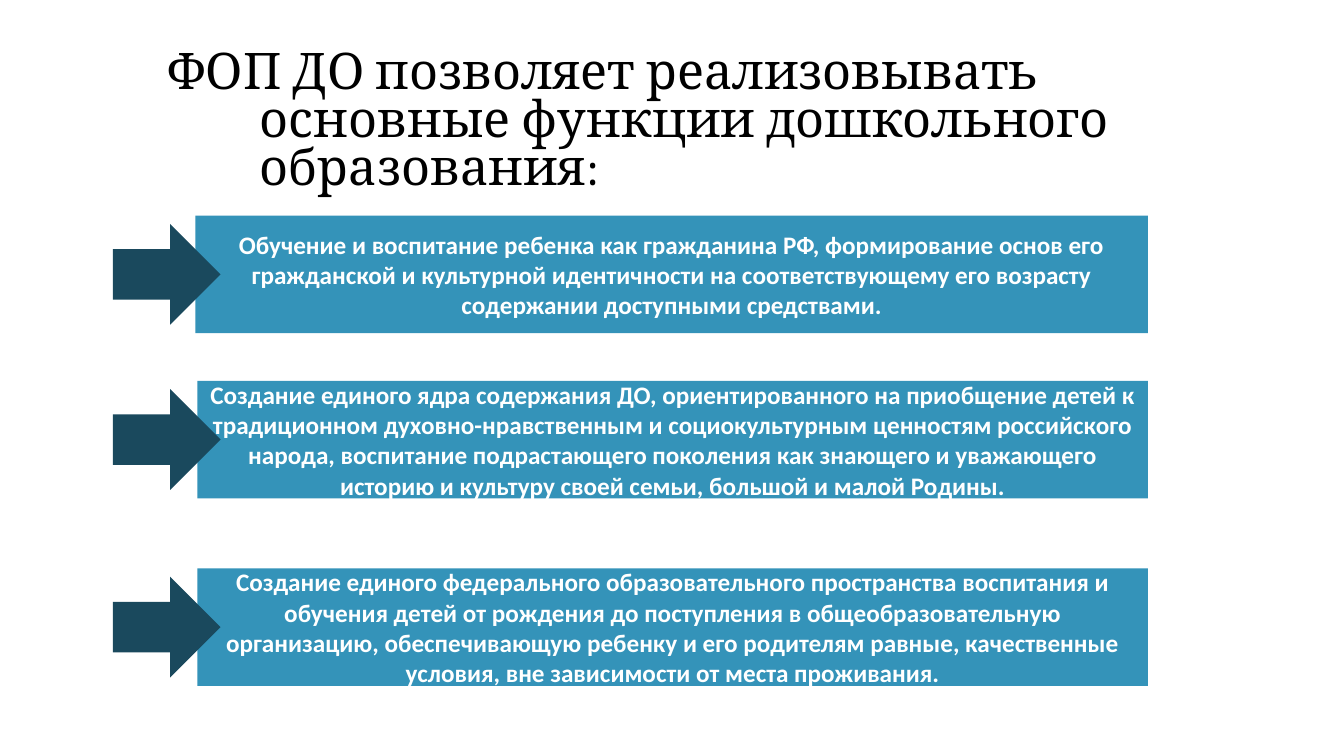
from pptx import Presentation
from pptx.dml.color import RGBColor
from pptx.enum import shapes, text
from pptx.util import Pt

TITLE = "ФОП ДО позволяет реализовывать основные функции дошкольного образования:"
FUNCTIONS = [
    (154, 139.5, [
        "Обучение и воспитание ребенка как гражданина РФ, формирование основ его "
        "гражданской и культурной идентичности на соответствующему его возрасту "
        "содержании доступными средствами.",
    ]),
    (272, 141, [
        "Создание единого ядра содержания ДО, ориентированного на приобщение детей к "
        "традиционном духовно-нравственным и социокультурным ценностям российского "
        "народа, воспитание подрастающего поколения как знающего и уважающего",
        "историю и культуру своей семьи, большой и малой Родины.",
    ]),
    (406, 141, [
        "Создание единого федерального образовательного пространства воспитания и",
        "обучения детей от рождения до поступления в общеобразовательную",
        "организацию, обеспечивающую ребенку и его родителям равные, качественные "
        "условия, вне зависимости от места проживания.",
    ]),
]
COLORS = {"title": "000000", "bar": "3493B9", "arrow": "1A495D", "label": "FFFFFF"}
BAR_RIGHT, BAR_H = 820, 84
ARROW_X, ARROW_W, ARROW_H = 80.6, 77, 72


def rgb(name):
    return RGBColor.from_string(COLORS[name])


def write(sp, lines, font, size, color, bold=False, align=text.PP_ALIGN.LEFT,
          anchor=text.MSO_ANCHOR.TOP, top=0, spacing=None, margin=0, indent=0):
    tf = sp.text_frame
    tf.word_wrap = True
    tf.vertical_anchor = anchor
    tf.margin_left = tf.margin_right = tf.margin_bottom = 0
    tf.margin_top = Pt(top)
    for i, line in enumerate(lines):
        p = tf.add_paragraph() if i else tf.paragraphs[0]
        p.alignment = align
        if spacing:
            p.line_spacing = spacing
        if margin:
            pPr = p._p.get_or_add_pPr()
            pPr.set("marL", str(Pt(margin)))
            pPr.set("indent", str(Pt(indent)))
        r = p.add_run()
        r.text = line
        r.font.name, r.font.size, r.font.bold = font, Pt(size), bold
        r.font.color.rgb = rgb(color)


def add_block(slide, kind, x, y, w, h, color):
    sp = slide.shapes.add_shape(kind, Pt(x), Pt(y), Pt(w), Pt(h))
    sp.shadow.inherit = False
    sp.fill.solid()
    sp.fill.fore_color.rgb = rgb(color)
    sp.line.fill.background()
    return sp


def main():
    prs = Presentation()
    prs.slide_width, prs.slide_height = Pt(960), Pt(540)
    slide = prs.slides.add_slide(prs.slide_layouts[6])

    title = slide.shapes.add_textbox(Pt(118), Pt(26.6), Pt(736.6), Pt(80))
    write(title, [TITLE], "Cambria", 36, "title", top=9.4, spacing=0.8,
          margin=67.7, indent=-66.2)

    for y, x, lines in FUNCTIONS:
        bar = add_block(slide, shapes.MSO_SHAPE.RECTANGLE,
                        x, y, BAR_RIGHT - x, BAR_H, "bar")
        write(bar, lines, "Calibri", 18, "label", bold=True,
              align=text.PP_ALIGN.CENTER, anchor=text.MSO_ANCHOR.MIDDLE)
        add_block(slide, shapes.MSO_SHAPE.RIGHT_ARROW, ARROW_X,
                  y + (BAR_H - ARROW_H) / 2, ARROW_W, ARROW_H, "arrow")

    prs.save("out.pptx")


if __name__ == "__main__":
    main()
